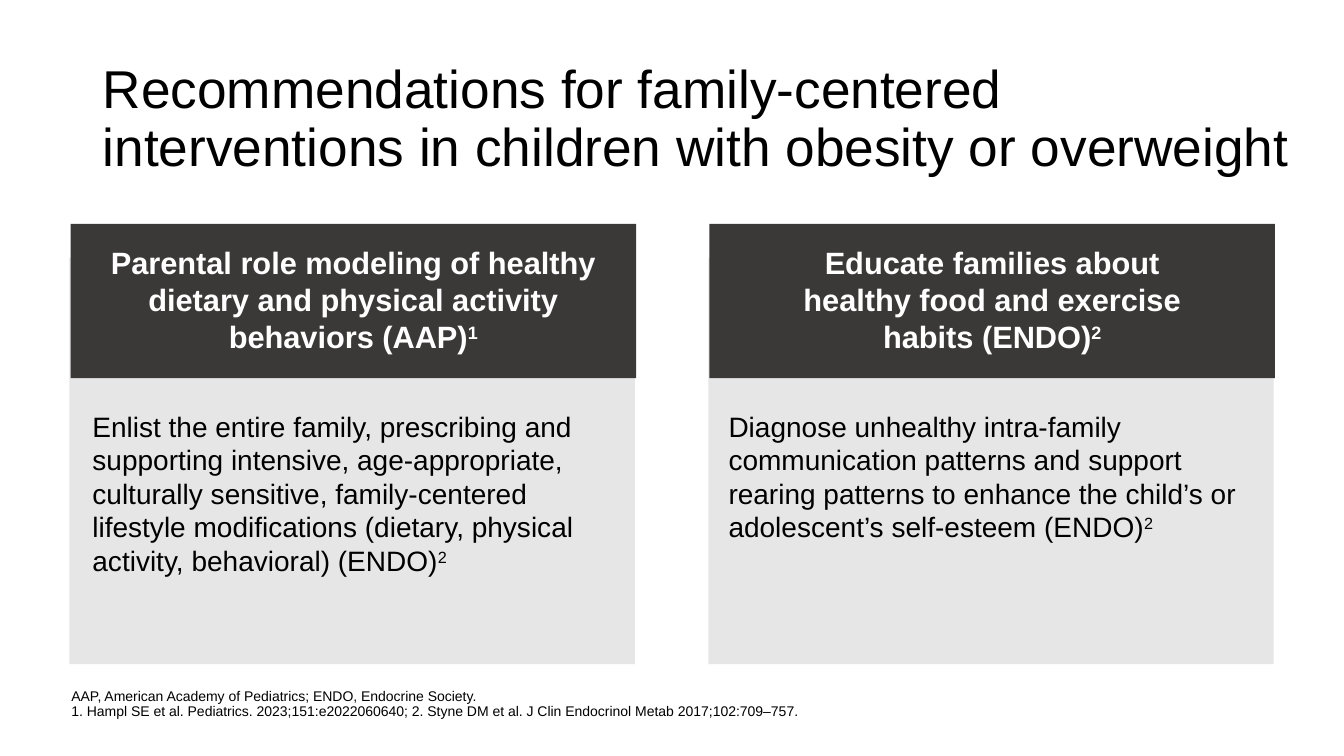
from dataclasses import dataclass

from lxml import etree
from pptx import Presentation, util as u
from pptx.dml.color import RGBColor
from pptx.enum import shapes, text
from pptx.oxml import ns


@dataclass(frozen=True)
class Theme:
    font: str = "Arial"
    ink: str = "000000"
    header_ink: str = "FFFFFF"
    header_fill: str = "3B3838"
    panel_fill: str = "E7E6E6"
    title_size: int = 38
    header_size: int = 22
    body_size: int = 20
    footnote_size: int = 10


THEME = Theme()

TITLE = "Recommendations for family-centered interventions in children with obesity or overweight"
FOOTNOTE = (
    "AAP, American Academy of Pediatrics; ENDO, Endocrine Society.\n"
    "1. Hampl SE et al. Pediatrics. 2023;151:e2022060640; "
    "2. Styne DM et al. J Clin Endocrinol Metab 2017;102:709–757."
)
COLUMNS = [
    {
        "header": "Parental role modeling of healthy dietary and physical activity behaviors (AAP)",
        "header_reference": "1",
        "body": "Enlist the entire family, prescribing and supporting intensive, "
                "age-appropriate, culturally sensitive, family-centered lifestyle "
                "modifications (dietary, physical activity, behavioral) (ENDO)",
        "body_reference": "2",
        "inset": 0.58,
    },
    {
        "header": "Educate families about\nhealthy food and exercise\nhabits (ENDO)",
        "header_reference": "2",
        "body": "Diagnose unhealthy intra-family communication patterns and support "
                "rearing patterns to enhance the child’s or adolescent’s self-esteem (ENDO)",
        "body_reference": "2",
        "inset": 0.51,
    },
]
COLUMN_BOX = (1.75, 5.64, 14.25, 11.1)
COLUMN_STEP = 16.1


def place(shape, left, top, width, height):
    shape.left, shape.top = u.Cm(left), u.Cm(top)
    shape.width, shape.height = u.Cm(width), u.Cm(height)


def write_text(shape, content, *, size, color=THEME.ink, bold=False, reference="",
               align=text.PP_ALIGN.LEFT, anchor=text.MSO_ANCHOR.TOP,
               margins=(0, 0, 0, 0), line_spacing=1.0, before=0, after=0,
               auto_size=text.MSO_AUTO_SIZE.NONE):
    frame = shape.text_frame
    frame.word_wrap = True
    frame.auto_size = auto_size
    frame.vertical_anchor = anchor
    frame.margin_left, frame.margin_top, frame.margin_right, frame.margin_bottom = map(u.Cm, margins)
    paragraph = frame.paragraphs[0]
    paragraph.text = content
    paragraph.alignment = align
    paragraph.line_spacing = line_spacing
    paragraph.space_before = u.Pt(before)
    paragraph.space_after = u.Pt(after)
    if reference:
        superscript = paragraph.add_run()
        superscript.text = reference
        superscript.font._element.set("baseline", "30000")
    for run in paragraph.runs:
        run.font.name = THEME.font
        run.font.size = u.Pt(size)
        run.font.bold = bold
        run.font.color.rgb = RGBColor.from_string(color)
    return paragraph


def add_block(group, box, fill):
    block = group.shapes.add_shape(shapes.MSO_SHAPE.RECTANGLE, *map(u.Cm, box))
    block.shadow.inherit = False
    block.fill.solid()
    block.fill.fore_color.rgb = RGBColor.from_string(fill)
    block.line.fill.background()
    return block


def add_title(slide, box):
    place(slide.shapes.title, *box)
    write_text(slide.shapes.title, TITLE, size=THEME.title_size, line_spacing=0.9,
               anchor=text.MSO_ANCHOR.MIDDLE, margins=(0.25, 0.13, 0.25, 0.13))


def add_footnote(slide, box):
    footnote = slide.placeholders[1]
    place(footnote, *box)
    paragraph = write_text(footnote, FOOTNOTE, size=THEME.footnote_size, line_spacing=0.9,
                           before=10, anchor=text.MSO_ANCHOR.BOTTOM)
    properties = paragraph._p.get_or_add_pPr()
    properties.set("marL", "0")
    properties.set("indent", "0")
    etree.SubElement(properties, ns.qn("a:buNone"))


def add_column(slide, box, column):
    left, top, width, height = box
    group = slide.shapes.add_group_shape()
    add_block(group, (left, top + 0.86, width, height - 0.86), THEME.panel_fill)
    header = add_block(group, (left + 0.03, top, width, 3.89), THEME.header_fill)
    write_text(header, column["header"], reference=column["header_reference"],
               size=THEME.header_size, color=THEME.header_ink, bold=True,
               align=text.PP_ALIGN.CENTER, margins=(0.51, 0.51, 0.51, 0.13))
    inset = column["inset"]
    body = slide.shapes.add_textbox(u.Cm(left + inset), u.Cm(top + 4.67),
                                    u.Cm(width - 2 * inset), u.Cm(4.27))
    write_text(body, column["body"], reference=column["body_reference"],
               size=THEME.body_size, after=6,
               auto_size=text.MSO_AUTO_SIZE.SHAPE_TO_FIT_TEXT)


def build_recommendations(presentation):
    slide = presentation.slides.add_slide(presentation.slide_layouts[1])
    add_title(slide, (2.34, 1.19, 30.53, 3.68))
    add_footnote(slide, (1.8, 17.25, 24.03, 0.89))
    left, top, width, height = COLUMN_BOX
    for index, column in enumerate(COLUMNS):
        add_column(slide, (left + index * COLUMN_STEP, top, width, height), column)


def main():
    presentation = Presentation()
    presentation.slide_width = u.Cm(33.87)
    presentation.slide_height = u.Cm(19.05)
    build_recommendations(presentation)
    presentation.save("out.pptx")


if __name__ == "__main__":
    main()
